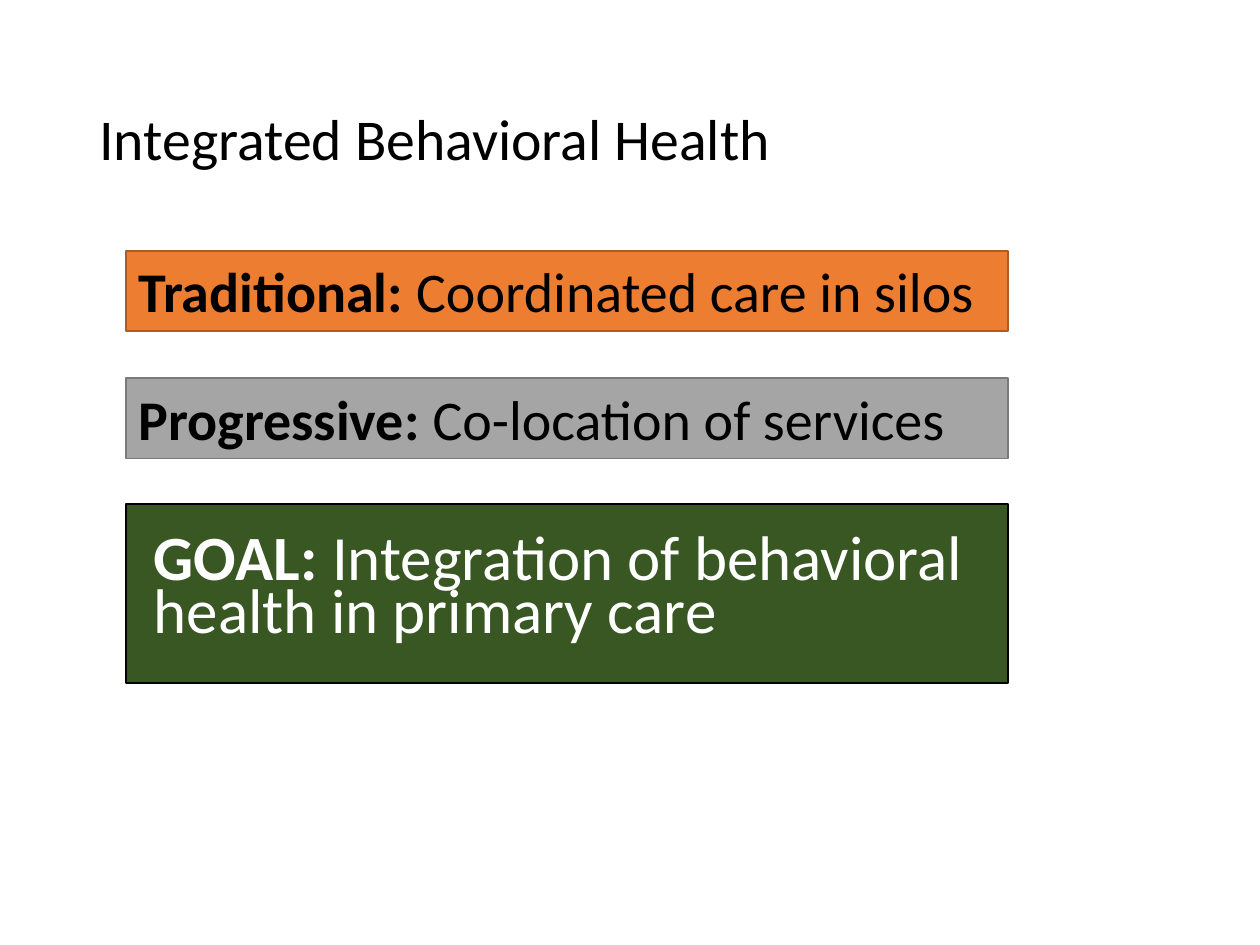
"""Build the Integrated Behavioral Health slide with three stages of care."""
from pptx import Presentation
from pptx import util as u
from pptx.dml.color import RGBColor
from pptx.enum import shapes, text

COLORS = {
    "black": "000000", "white": "FFFFFF",
    "orange": "ED7D31", "brown": "AF5C24",
    "gray": "A5A5A5", "dark gray": "7A7A7A",
    "green": "385723",
}


def color(name):
    return RGBColor.from_string(COLORS[name])


def add_run(paragraph, wording, size, ink, bold=False):
    run = paragraph.add_run()
    run.text = wording
    run.font.name = "Calibri"
    run.font.size = u.Pt(size)
    run.font.bold = bold
    run.font.color.rgb = color(ink)


deck = Presentation()
deck.slide_width, deck.slide_height = u.Inches(10), u.Inches(7.5)
slide = deck.slides.add_slide(deck.slide_layouts[6])

heading = slide.shapes.add_textbox(
    u.Inches(0.69), u.Inches(0.4), u.Inches(8.62), u.Inches(1.45)).text_frame
heading.word_wrap = True
heading.vertical_anchor = text.MSO_ANCHOR.MIDDLE
heading.paragraphs[0].line_spacing = 0.9
add_run(heading.paragraphs[0], "Integrated Behavioral Health", 33, "black")

stages = [
    ("Traditional: ", "Coordinated care in silos",
     1.99, 0.64, "orange", "brown", "black", 32, 1, 0.1, 0.05),
    ("Progressive: ", "Co-location of services",
     3, 0.64, "gray", "dark gray", "black", 32, 1, 0.1, 0.05),
    ("GOAL: ", "Integration of behavioral health in primary care",
     4, 1.42, "green", "black", "white", 36, 0.7, 0.22, 0.27),
]
for label, care, top, height, fill, border, ink, size, spacing, left_inset, top_inset in stages:
    stage = slide.shapes.add_shape(
        shapes.MSO_SHAPE.RECTANGLE,
        u.Inches(1), u.Inches(top), u.Inches(7), u.Inches(height))
    stage.shadow.inherit = False
    stage.fill.solid()
    stage.fill.fore_color.rgb = color(fill)
    stage.line.color.rgb = color(border)
    stage.line.width = u.Pt(1)
    frame = stage.text_frame
    frame.word_wrap = True
    frame.vertical_anchor = text.MSO_ANCHOR.TOP
    frame.margin_left = u.Inches(left_inset)
    frame.margin_top = u.Inches(top_inset)
    wording = frame.paragraphs[0]
    wording.alignment = text.PP_ALIGN.LEFT
    wording.line_spacing = spacing
    add_run(wording, label, size, ink, bold=True)
    add_run(wording, care, size, ink)

deck.save("out.pptx")
